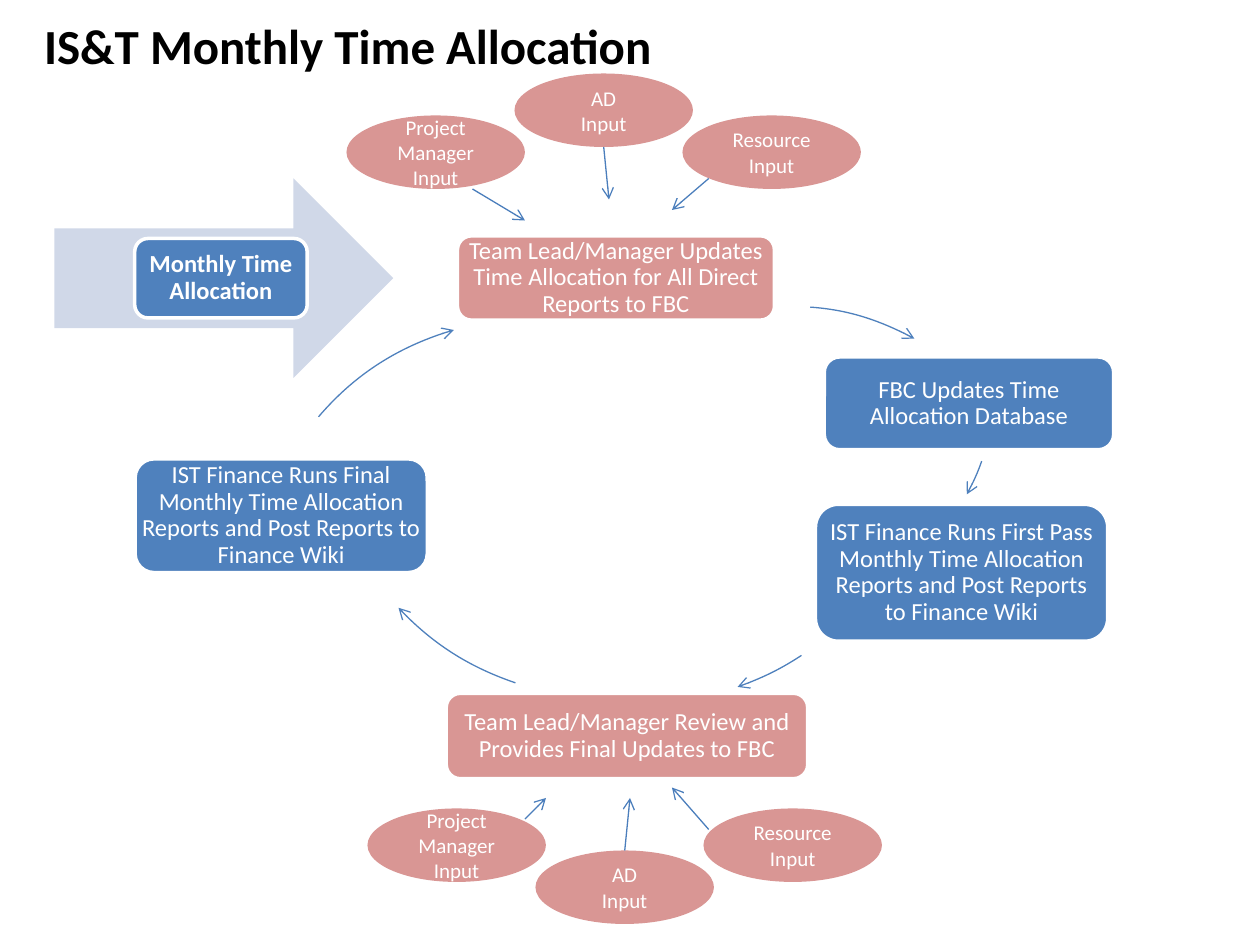
from lxml import etree
from pptx import Presentation
from pptx.dml.color import RGBColor
from pptx.enum.shapes import MSO_CONNECTOR, MSO_SHAPE
from pptx.enum.text import MSO_ANCHOR, MSO_AUTO_SIZE, PP_ALIGN
from pptx.oxml.ns import qn
from pptx.util import Pt

ROUNDED = MSO_SHAPE.ROUNDED_RECTANGLE
OVAL = MSO_SHAPE.OVAL
RIGHT_ARROW = MSO_SHAPE.RIGHT_ARROW
STRAIGHT = MSO_CONNECTOR.STRAIGHT
MIDDLE = MSO_ANCHOR.MIDDLE
LEFT, CENTER = PP_ALIGN.LEFT, PP_ALIGN.CENTER
NO_AUTOFIT = MSO_AUTO_SIZE.NONE

COLORS = {
    "text": "000000",
    "light": "FFFFFF",
    "finance": "4F81BD",
    "manager": "D99694",
    "period": "D0D8E8",
    "flow": "4F81BD",
    "input": "4B7EBC",
}


class ProcessSlide:
    FONT = "Calibri"

    def __init__(self, slide):
        self.slide = slide
        self.shapes = slide.shapes

    def color(self, name):
        return RGBColor.from_string(COLORS[name])

    def add_text(self, frame, lines, size, color="light", bold=False,
                 align=CENTER, spacing=None):
        frame.word_wrap = True
        frame.auto_size = NO_AUTOFIT
        frame.vertical_anchor = MIDDLE
        for index, line in enumerate(lines):
            paragraph = frame.add_paragraph() if index else frame.paragraphs[0]
            paragraph.alignment = align
            if spacing:
                paragraph.line_spacing = spacing
            run = paragraph.add_run()
            run.text = line
            run.font.name = self.FONT
            run.font.size = Pt(size)
            run.font.bold = bold
            run.font.color.rgb = self.color(color)

    def title(self, text, box):
        title = self.shapes.title
        title.left, title.top, title.width, title.height = map(Pt, box)
        self.add_text(title.text_frame, [text], 28, "text", True, LEFT)

    def block(self, kind, box, fill):
        shape = self.shapes.add_shape(kind, *map(Pt, box))
        shape.shadow.inherit = False
        shape.fill.solid()
        shape.fill.fore_color.rgb = self.color(fill)
        shape.line.fill.background()
        return shape

    def step(self, text, box, fill, bold=False):
        shape = self.block(ROUNDED, box, fill)
        shape.line.color.rgb = self.color("light")
        shape.line.width = Pt(2)
        frame = shape.text_frame
        frame.margin_left = frame.margin_right = Pt(0.5)
        frame.margin_top = frame.margin_bottom = Pt(0.5)
        self.add_text(frame, [text], 14, bold=bold, spacing=0.9)

    def source(self, lines, left, top):
        shape = self.block(OVAL, (left, top, 102, 42), "manager")
        self.add_text(shape.text_frame, lines, 12)

    def arrow_line(self, shape, color):
        shape.line.color.rgb = self.color(color)
        shape.line.width = Pt(0.75)
        outline = shape._element.spPr.find(qn("a:ln"))
        etree.SubElement(outline, qn("a:tailEnd"), type="arrow")

    def arrow(self, start, end):
        connector = self.shapes.add_connector(STRAIGHT, *map(Pt, start + end))
        self.arrow_line(connector, "input")
        etree.SubElement(connector._element.spPr, qn("a:effectLst"))

    def curve(self, start, *controls_and_end):
        builder = self.shapes.build_freeform(*map(Pt, start))
        builder.add_line_segments(
            [(Pt(x), Pt(y)) for x, y in controls_and_end], close=False)
        shape = builder.convert_to_shape()
        shape.shadow.inherit = False
        shape.fill.background()
        self.arrow_line(shape, "flow")
        # Turn the three segments into one cubic curve
        outline = next(shape._element.iter(qn("a:path")))
        segments = outline.findall(qn("a:lnTo"))
        bezier = etree.SubElement(outline, qn("a:cubicBezTo"))
        for segment in segments:
            bezier.append(segment[0])
            outline.remove(segment)


def main():
    prs = Presentation()
    prs.slide_width, prs.slide_height = Pt(720), Pt(540)
    page = ProcessSlide(prs.slides.add_slide(prs.slide_layouts[5]))
    page.title("IS&T Monthly Time Allocation", (18, 12.25, 648, 26.5))

    # Cycle of steps
    final_reports = ("Monthly Time Allocation Reports and Post Reports "
                     "to Finance Wiki")
    steps = [
        ("Team Lead/Manager Updates Time Allocation for All Direct "
         "Reports to FBC", (261.4, 134.8, 181.2, 48.2), "manager"),
        ("FBC Updates Time Allocation Database",
         (471, 204, 165.4, 53), "finance"),
        ("IST Finance Runs First Pass " + final_reports,
         (466, 288.2, 167, 78.2), "finance"),
        ("Team Lead/Manager Review and Provides Final Updates to FBC",
         (255, 396.2, 206.6, 48.8), "manager"),
        ("IST Finance Runs Final " + final_reports,
         (77.2, 262.2, 167, 65), "finance"),
    ]
    for text, box, fill in steps:
        page.step(text, box, fill)

    # Curved arrows between the steps
    curves = [
        ((463, 175.5), (483.8, 177), (504, 183.5), (522.5, 193.5)),
        ((561, 263.5), (558.7, 270), (555.8, 276.5), (552.5, 282.5)),
        ((458, 374.5), (446.5, 382), (434.3, 388), (421.5, 392.5)),
        ((294.5, 390.2), (269.3, 381.6), (246.2, 367.2), (227.7, 347.3)),
        ((182, 238.2), (202.3, 214.5), (229.5, 197.2), (259.3, 188.6)),
    ]
    for points in curves:
        page.curve(*points)

    # Period marker
    page.block(RIGHT_ARROW, (31, 102, 193.7, 114), "period")
    page.step("Monthly Time Allocation", (77, 136.3, 98.6, 45.4),
              "finance", bold=True)

    # Inputs above the first step and below the review step
    inputs = [["Project Manager Input"], ["AD", "Input"], ["Resource", "Input"]]
    for left, top, middle_shift in ((198, 66, -24), (210, 462, 24)):
        for column, lines in enumerate(inputs):
            shift = middle_shift if column == 1 else 0
            page.source(lines, left + 96 * column, top + shift)

    # Arrows from the inputs
    arrows = [
        ((270, 108), (300, 126)),
        ((345, 84), (348, 114)),
        ((405, 102), (384, 120)),
        ((300, 468), (312, 456)),
        ((357, 486), (360, 456)),
        ((405, 474), (384, 450)),
    ]
    for start, end in arrows:
        page.arrow(start, end)

    prs.save("out.pptx")


if __name__ == "__main__":
    main()
